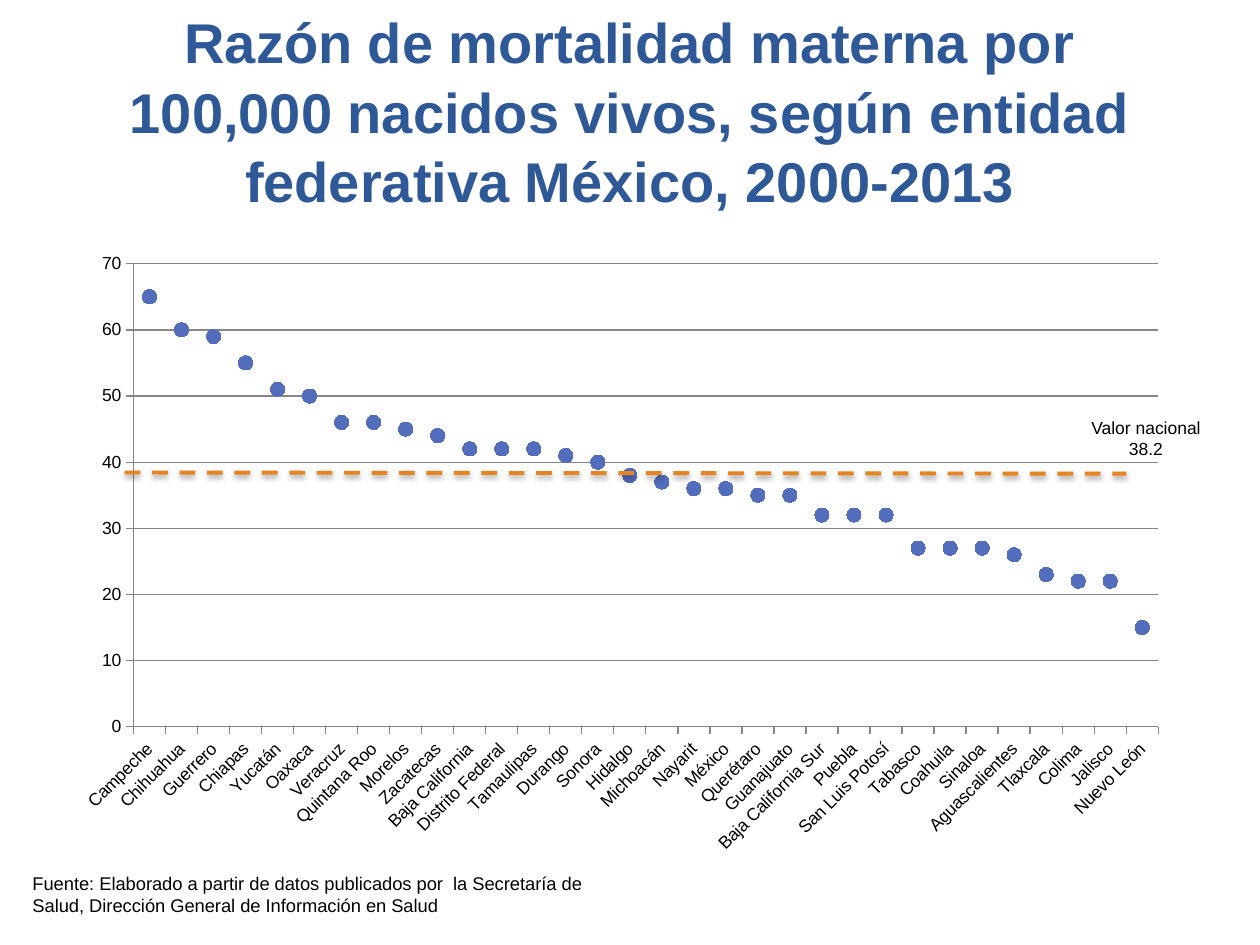
from dataclasses import dataclass

from lxml import etree
from pptx import Presentation
from pptx.chart.data import CategoryChartData
from pptx.dml.color import RGBColor
from pptx.enum.chart import XL_CHART_TYPE, XL_MARKER_STYLE, XL_TICK_MARK
from pptx.enum.dml import MSO_LINE
from pptx.enum.shapes import MSO_CONNECTOR
from pptx.enum.text import MSO_ANCHOR, PP_ALIGN
from pptx.oxml import parse_xml
from pptx.oxml.ns import nsdecls, qn
from pptx.util import Inches, Pt


@dataclass(frozen=True)
class Theme:
    font: str = "Arial"
    heading: RGBColor = RGBColor(0x2F, 0x58, 0x97)
    ink: RGBColor = RGBColor(0, 0, 0)
    grid: RGBColor = RGBColor(0x86, 0x86, 0x86)
    marker: RGBColor = RGBColor(0x51, 0x6D, 0xBB)
    marker_edge: RGBColor = RGBColor(0x60, 0x76, 0xB4)
    national: RGBColor = RGBColor(0xE6, 0x84, 0x22)
    heading_size: Pt = Pt(32)
    label_size: Pt = Pt(10)
    source_size: Pt = Pt(10.5)


theme = Theme()
prs = Presentation()
prs.slide_width, prs.slide_height = Inches(10), Inches(7.5)
slide = prs.slides.add_slide(prs.slide_layouts[6])


def area(left, top, width, height):
    """Turn percentages of the slide's width and height into lengths."""
    across, down = prs.slide_width / 100, prs.slide_height / 100
    return [int(share * unit) for share, unit in
            ((left, across), (top, down), (width, across), (height, down))]


def add_text(place, lines, size, color, align, bold=False, wrap=True):
    frame = slide.shapes.add_textbox(*area(*place)).text_frame
    frame.word_wrap = wrap
    frame.text = "\n".join(lines)
    for paragraph in frame.paragraphs:
        paragraph.alignment = align
        paragraph.font.name = theme.font
        paragraph.font.size = size
        paragraph.font.bold = bold
        paragraph.font.color.rgb = color
    return frame


# Title
title = add_text(
    (5, 0, 90, 23.33),
    ["Razón de mortalidad materna por 100,000 nacidos vivos, "
     "según entidad federativa México, 2000-2013"],
    theme.heading_size, theme.heading, PP_ALIGN.CENTER, bold=True)
title.vertical_anchor = MSO_ANCHOR.BOTTOM
title.paragraphs[0].line_spacing = 1.04

# Maternal mortality ratio by state
ratios = {
    "Campeche": 65, "Chihuahua": 60, "Guerrero": 59, "Chiapas": 55,
    "Yucatán": 51, "Oaxaca": 50, "Veracruz": 46, "Quintana Roo": 46,
    "Morelos": 45, "Zacatecas": 44, "Baja California": 42,
    "Distrito Federal": 42, "Tamaulipas": 42, "Durango": 41, "Sonora": 40,
    "Hidalgo": 38, "Michoacán": 37, "Nayarit": 36, "México": 36,
    "Querétaro": 35, "Guanajuato": 35, "Baja California Sur": 32,
    "Puebla": 32, "San Luis Potosí": 32, "Tabasco": 27, "Coahuila": 27,
    "Sinaloa": 27, "Aguascalientes": 26, "Tlaxcala": 23, "Colima": 22,
    "Jalisco": 22, "Nuevo León": 15,
}
data = CategoryChartData()
data.categories = list(ratios)
data.add_series("Series 1", list(ratios.values()))
chart = slide.shapes.add_chart(
    XL_CHART_TYPE.LINE_MARKERS, *area(5, 25.47, 88.8, 66.13), data).chart
chart.has_legend = False
chart.has_title = False
chart.font.name = theme.font
chart.font.size = theme.label_size
chart.font.color.rgb = theme.ink

plot = chart.plots[0]
plot.vary_by_categories = False
states = plot.series[0]
states.smooth = False
states.format.line.fill.background()
states.marker.style = XL_MARKER_STYLE.CIRCLE
states.marker.size = 8
states.marker.format.fill.solid()
states.marker.format.fill.fore_color.rgb = theme.marker
states.marker.format.line.color.rgb = theme.marker_edge

scale = chart.value_axis
scale.minimum_scale, scale.maximum_scale, scale.major_unit = 0, 70, 10
scale.has_major_gridlines = True
for axis in (scale, chart.category_axis):
    axis.major_tick_mark = XL_TICK_MARK.OUTSIDE
    axis.format.line.color.rgb = theme.grid
    axis.format.line.width = Pt(0.75)
scale.major_gridlines.format.line.color.rgb = theme.grid
scale.major_gridlines.format.line.width = Pt(0.75)
state_labels = chart.category_axis.tick_labels
state_labels.font.size = theme.label_size
chart.category_axis._element.find(qn("c:txPr")).find(qn("a:bodyPr")).set("rot", "-2700000")

# Fixed plot area, in shares of the chart
plot_area = plot._element.getparent()
for old_layout in plot_area.findall(qn("c:layout")):
    plot_area.remove(old_layout)
inner = {"layoutTarget": "inner", "xMode": "edge", "yMode": "edge",
         "x": 0.063, "y": 0.037, "w": 0.916, "h": 0.741}
layout = parse_xml(f"<c:layout {nsdecls('c')}><c:manualLayout/></c:layout>")
for tag, value in inner.items():
    etree.SubElement(layout[0], qn(f"c:{tag}")).set("val", str(value))
plot_area.insert(0, layout)

# National value
left, top, width, drop = area(9.9, 50, 79.5, 0.13)
national = slide.shapes.add_connector(
    MSO_CONNECTOR.STRAIGHT, left, top, left + width, top + drop)
national.line.color.rgb = theme.national
national.line.width = Pt(2.25)
national.line.dash_style = MSO_LINE.DASH
national._element.spPr.append(parse_xml(
    f'<a:effectLst {nsdecls("a")}>'
    f'<a:outerShdw blurRad="{Pt(3.1)}" dist="{Pt(1.6)}" dir="5400000" rotWithShape="0">'
    f'<a:srgbClr val="{theme.ink}"><a:alpha val="38000"/></a:srgbClr>'
    '</a:outerShdw></a:effectLst>'))
add_text((85.6, 43.47, 10.7, 6.4), ["Valor nacional", "38.2"],
         theme.label_size, theme.ink, PP_ALIGN.CENTER, wrap=False)

# Source
add_text((1.6, 91.6, 50, 6),
         ["Fuente: Elaborado a partir de datos publicados por  la Secretaría de "
          "Salud, Dirección General de Información en Salud"],
         theme.source_size, theme.ink, PP_ALIGN.LEFT)

prs.save("out.pptx")
